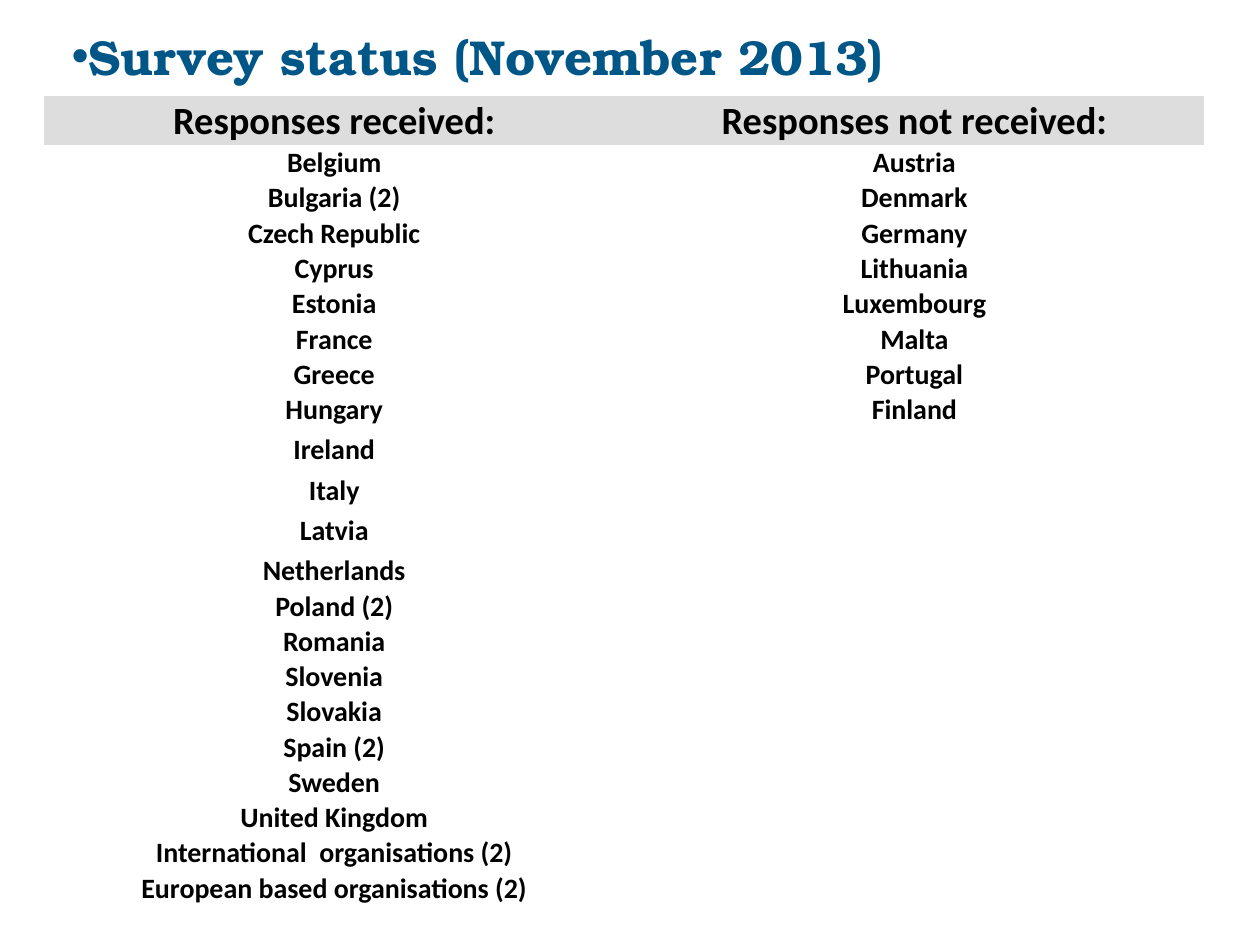
"""Build a slide listing which countries answered the survey."""
import dataclasses
import typing

import lxml.etree
import pptx
import pptx.dml.color
import pptx.enum.text
import pptx.oxml.ns
import pptx.slide
import pptx.table
import pptx.util

Inches = pptx.util.Inches
Pt = pptx.util.Pt
qn = pptx.oxml.ns.qn


@dataclasses.dataclass(frozen=True)
class Theme:
    blue: str = "005686"
    black: str = "000000"
    grey: str = "DDDDDD"
    serif: str = "TeX Gyre Bonum"
    sans: str = "Calibri"
    title: int = 28
    head: int = 22
    body: int = 16
    plain: str = "{2D5ABB26-0587-4C30-8999-92F81FD0307C}"


class Column(typing.NamedTuple):
    head: str
    names: list[str]


THEME = Theme()
COLUMNS = [
    Column("Responses received:", [
        "Belgium", "Bulgaria (2)", "Czech Republic", "Cyprus", "Estonia",
        "France", "Greece", "Hungary", "Ireland", "Italy", "Latvia",
        "Netherlands", "Poland (2)", "Romania", "Slovenia", "Slovakia",
        "Spain (2)", "Sweden", "United Kingdom",
        "International  organisations (2)",
        "European based organisations (2)",
    ]),
    Column("Responses not received:", [
        "Austria", "Denmark", "Germany", "Lithuania", "Luxembourg",
        "Malta", "Portugal", "Finland",
    ]),
]
TALL = range(9, 13)


def add_run(para, text: str, size: int, face: str, color: str) -> None:
    """Append one bold run to a paragraph."""
    run = para.add_run()
    run.text = text
    font = run.font
    font.name, font.size, font.bold = face, Pt(size), True
    font.color.rgb = pptx.dml.color.RGBColor.from_string(color)


def add_title(slide: pptx.slide.Slide, text: str) -> None:
    """Draw the bulleted title."""
    box = slide.shapes.add_textbox(Inches(0.47), Inches(0.16), Inches(7.89), Inches(0.63))
    box.text_frame.word_wrap = True
    para = box.text_frame.paragraphs[0]
    props = para._p.get_or_add_pPr()
    props.set("marL", "0")
    props.set("indent", "0")
    lxml.etree.SubElement(props, qn("a:buFont")).set("typeface", "Arial")
    lxml.etree.SubElement(props, qn("a:buChar")).set("char", "•")
    add_run(para, text, THEME.title, THEME.serif, THEME.blue)


def fill_cell(cell: pptx.table._Cell, text: str, head: bool) -> None:
    """Style one cell and write its text."""
    anchor = pptx.enum.text.MSO_ANCHOR
    cell.margin_left = cell.margin_right = cell.margin_top = Inches(0.01)
    cell.margin_bottom = 0
    cell.vertical_anchor = anchor.MIDDLE if head else anchor.BOTTOM
    if head:
        cell.fill.solid()
        cell.fill.fore_color.rgb = pptx.dml.color.RGBColor.from_string(THEME.grey)
    else:
        cell.fill.background()
    para = cell.text_frame.paragraphs[0]
    para.alignment = pptx.enum.text.PP_ALIGN.CENTER
    size = THEME.head if head else THEME.body
    if text:
        add_run(para, text, size, THEME.sans, THEME.black)
    else:
        lxml.etree.SubElement(para._p, qn("a:endParaRPr")).set("sz", str(size * 100))


def add_grid(slide: pptx.slide.Slide, columns: list[Column]) -> None:
    """Draw the table of answers."""
    count = 1 + max(len(column.names) for column in columns)
    frame = slide.shapes.add_table(
        count, len(columns), Inches(0.35), Inches(0.76), Inches(9.21), Inches(6.35))
    table = frame.table
    table.first_row = table.horz_banding = False
    table._tbl.tblPr.find(qn("a:tableStyleId")).text = THEME.plain
    for index, row in enumerate(table.rows):
        row.height = Inches(0.39 if index == 0 else 0.32 if index in TALL else 0.28)
    for place, column in enumerate(columns):
        texts = [column.head, *column.names]
        texts += [""] * (count - len(texts))
        for index, text in enumerate(texts):
            fill_cell(table.cell(index, place), text, index == 0)


def main() -> None:
    """Build and save the deck."""
    deck = pptx.Presentation()
    deck.slide_width, deck.slide_height = Inches(10), Inches(7.5)
    slide = deck.slides.add_slide(deck.slide_layouts[6])
    add_title(slide, "Survey status (November 2013)")
    add_grid(slide, COLUMNS)
    deck.save("out.pptx")


if __name__ == "__main__":
    main()
